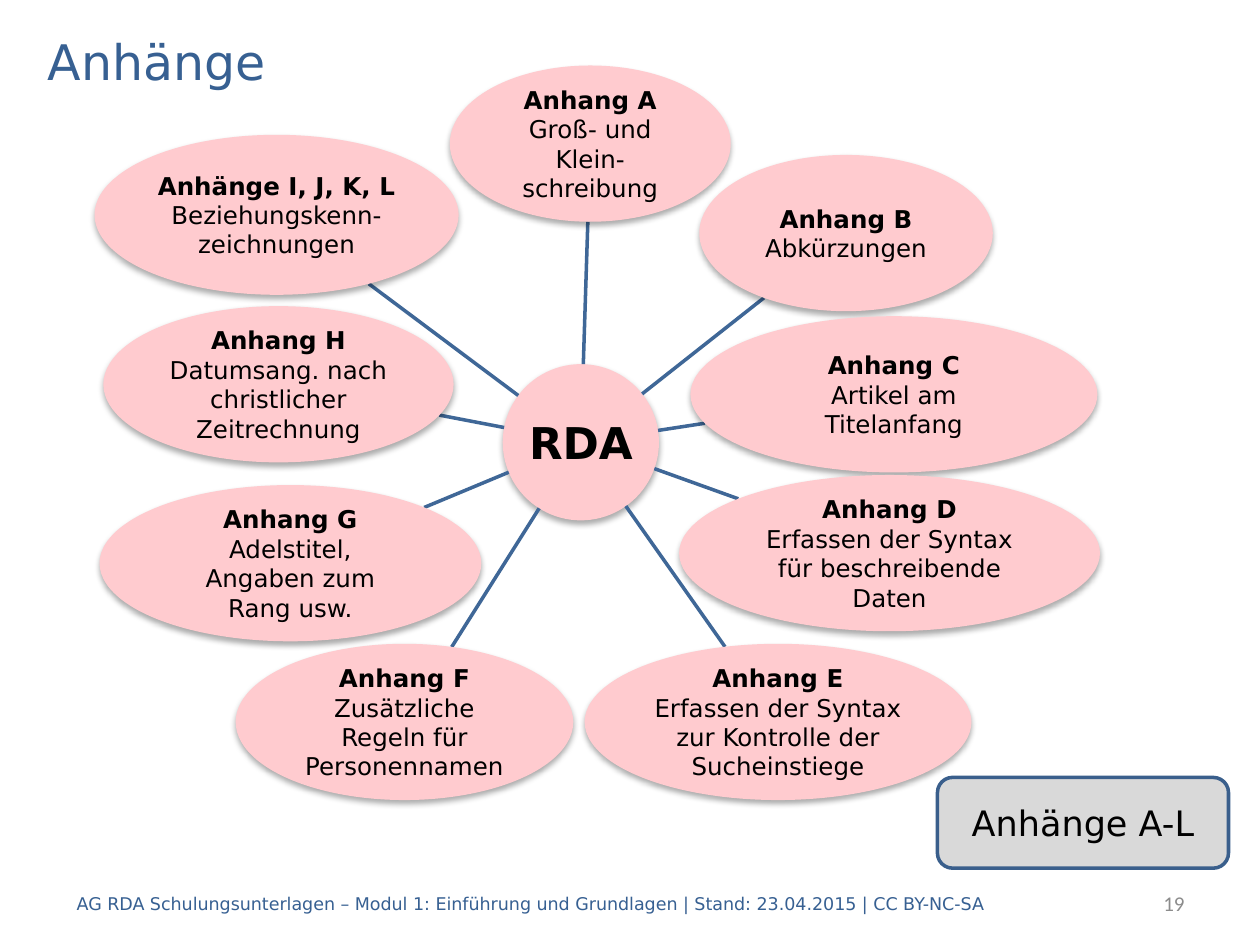
from dataclasses import dataclass
from math import hypot

from lxml.etree import SubElement
from pptx import Presentation
from pptx.dml.color import RGBColor
from pptx.enum.shapes import MSO_CONNECTOR, MSO_SHAPE
from pptx.enum.text import MSO_ANCHOR, PP_ALIGN
from pptx.oxml.ns import qn
from pptx.util import Inches, Pt

COLUMNS, ROWS = 100, 75
BLUE, SPOKE_BLUE, OUTLINE_BLUE = "376092", "3F6797", "3A5F8C"
PINK, LIGHT_GREY, GREY, BLACK = "FFCBCF", "D9D9D9", "8C8C8C", "000000"

deck = Presentation()
deck.slide_width, deck.slide_height = Inches(10), Inches(7.5)
slide = deck.slides.add_slide(deck.slide_layouts[6])


@dataclass(frozen=True)
class Area:
    """A rectangle in grid columns and rows."""
    left: float
    top: float
    width: float
    height: float

    @property
    def centre(self) -> tuple[float, float]:
        return self.left + self.width / 2, self.top + self.height / 2

    def rim_towards(self, target: tuple[float, float]) -> tuple[float, float]:
        """Point where the ray from the centre to target leaves the ellipse."""
        x, y = self.centre
        dx, dy = target[0] - x, target[1] - y
        reach = 1 / hypot(dx / (self.width / 2), dy / (self.height / 2))
        return x + dx * reach, y + dy * reach


@dataclass(frozen=True)
class Appendix:
    area: Area
    heading: str
    topic: str


def across(columns: float) -> int:
    return round(deck.slide_width * columns / COLUMNS)


def down(rows: float) -> int:
    return round(deck.slide_height * rows / ROWS)


def bounds(area: Area) -> tuple[int, int, int, int]:
    return across(area.left), down(area.top), across(area.width), down(area.height)


def colour(value: str) -> RGBColor:
    return RGBColor.from_string(value)


def write(shape, text: str, *, size: float, ink: str = BLACK, font: str = "DejaVu Sans",
          align=PP_ALIGN.CENTER, bold_lines: int = 0, inset: float = 0.1) -> None:
    """Fill a shape with one paragraph whose first bold_lines lines are bold."""
    frame = shape.text_frame
    frame.word_wrap = True
    frame.vertical_anchor = MSO_ANCHOR.MIDDLE
    frame.margin_left = frame.margin_right = Inches(inset)
    frame.margin_top = frame.margin_bottom = Inches(min(inset, 0.05))
    paragraph = frame.paragraphs[0]
    paragraph.alignment = align
    for number, line in enumerate(text.split("\n")):
        if number:
            paragraph.add_line_break()
        run = paragraph.add_run()
        run.text = line
        run.font.name, run.font.size = font, Pt(size)
        run.font.bold = number < bold_lines
        run.font.color.rgb = colour(ink)


def add_label(area: Area, text: str, **text_format) -> None:
    write(slide.shapes.add_textbox(*bounds(area)), text, **text_format)


def add_filled(kind: MSO_SHAPE, area: Area, fill: str):
    shape = slide.shapes.add_shape(kind, *bounds(area))
    shape.shadow.inherit = False
    shape.fill.solid()
    shape.fill.fore_color.rgb = colour(fill)
    return shape


def add_bubble(area: Area, text: str, **text_format) -> None:
    bubble = add_filled(MSO_SHAPE.OVAL, area, PINK)
    bubble.line.fill.background()
    effects = bubble._element.spPr.find(qn("a:effectLst"))
    shadow = SubElement(effects, qn("a:outerShdw"), blurRad=str(Pt(3.5)), dist=str(Pt(2.2)),
                        dir="5400000", rotWithShape="0")
    tint = SubElement(shadow, qn("a:srgbClr"), val=BLACK)
    SubElement(tint, qn("a:alpha"), val="32000")
    write(bubble, text, **text_format)


def add_spoke(hub: Area, target: Area) -> None:
    start, end = hub.rim_towards(target.centre), target.rim_towards(hub.centre)
    spoke = slide.shapes.add_connector(MSO_CONNECTOR.STRAIGHT, across(start[0]), down(start[1]),
                                       across(end[0]), down(end[1]))
    spoke.line.color.rgb = colour(SPOKE_BLUE)
    spoke.line.width = Pt(2)
    SubElement(spoke._element.spPr, qn("a:effectLst"))


HUB = Area(39.9, 28.9, 12.4, 12.4)
APPENDICES = [
    Appendix(Area(35.7, 5.2, 22.3, 12.4), "Anhang A", "Groß- und\nKlein-\nschreibung"),
    Appendix(Area(55.5, 12.3, 23.3, 12.4), "Anhang B", "Abkürzungen"),
    Appendix(Area(54.8, 25.1, 32.3, 12.4), "Anhang C", "Artikel am\nTitelanfang"),
    Appendix(Area(53.9, 37.7, 33.4, 12.4), "Anhang D",
             "Erfassen der Syntax\nfür beschreibende\nDaten"),
    Appendix(Area(46.4, 51.1, 30.7, 12.4), "Anhang E",
             "Erfassen der Syntax zur Kontrolle der Sucheinstiege"),
    Appendix(Area(18.7, 51.1, 26.8, 12.4), "Anhang F", "Zusätzliche\nRegeln für\nPersonennamen"),
    Appendix(Area(7.9, 38.5, 30.3, 12.4), "Anhang G", "Adelstitel,\nAngaben zum\nRang usw."),
    Appendix(Area(8.2, 24.3, 27.8, 12.4), "Anhang H",
             "Datumsang. nach\nchristlicher\nZeitrechnung"),
    Appendix(Area(7.5, 10.7, 28.9, 12.7), "Anhänge I, J, K, L", "Beziehungskenn-zeichnungen"),
]

add_label(Area(2.8, 2, 94.5, 5.6), "Anhänge", size=28, ink=BLUE, align=PP_ALIGN.LEFT)
add_label(Area(5.1, 69.7, 77.2, 4),
          "AG RDA Schulungsunterlagen – Modul 1: Einführung und Grundlagen"
          " | Stand: 23.04.2015 | CC BY-NC-SA",
          size=10, ink=BLUE, align=PP_ALIGN.LEFT)
add_label(Area(79.1, 69.7, 15.9, 4), "19", size=12, ink=GREY, font="Calibri",
          align=PP_ALIGN.RIGHT)

summary = add_filled(MSO_SHAPE.ROUNDED_RECTANGLE, Area(74.4, 61.7, 23.1, 7.2), LIGHT_GREY)
summary.line.color.rgb = colour(OUTLINE_BLUE)
summary.line.width = Pt(2)
write(summary, "Anhänge A-L", size=20)

add_bubble(HUB, "RDA", size=25, bold_lines=1, inset=0.02)
for appendix in APPENDICES:
    add_spoke(HUB, appendix.area)
    add_bubble(appendix.area, f"{appendix.heading}\n{appendix.topic}",
               size=14, bold_lines=1, inset=0.01)

deck.save("out.pptx")
